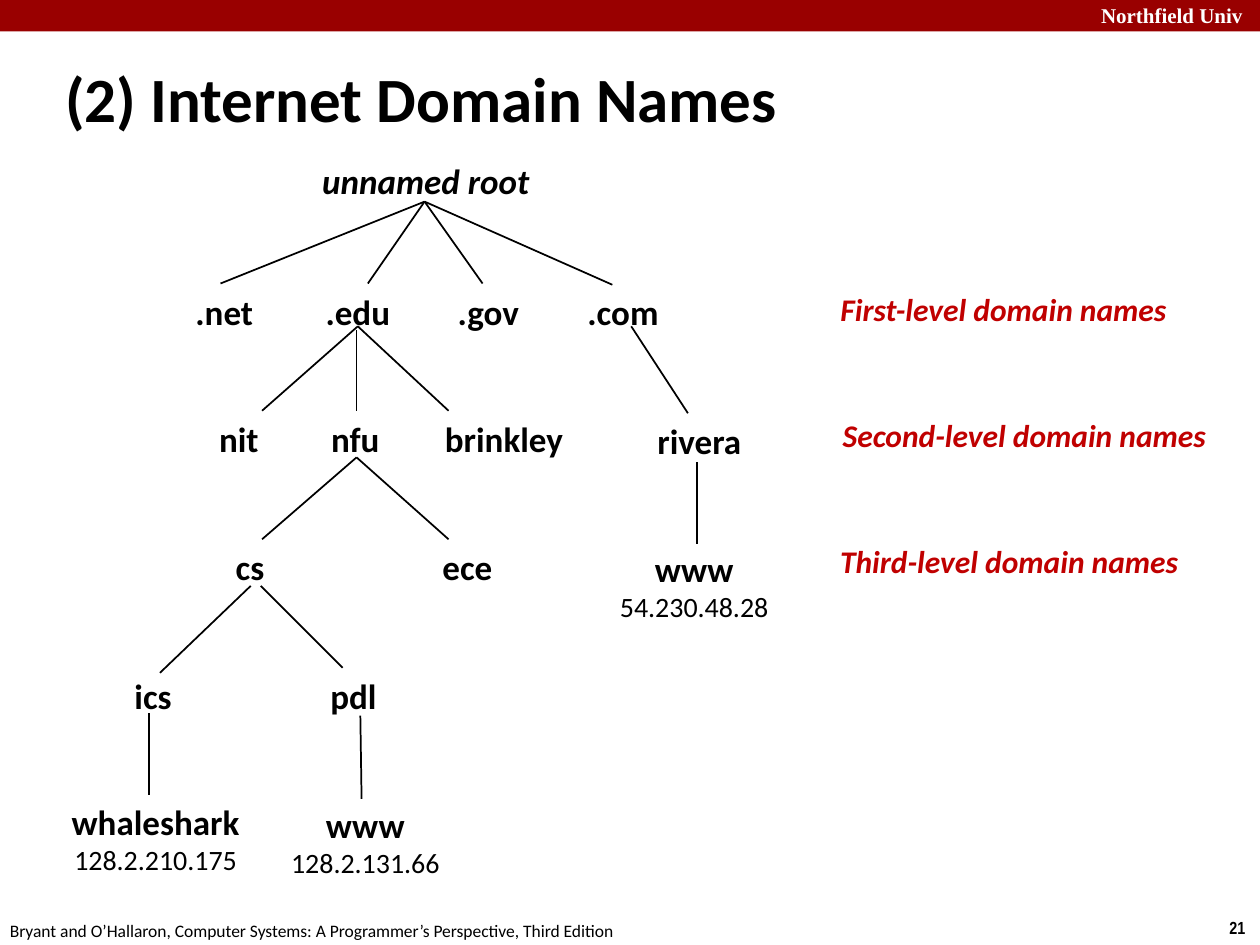
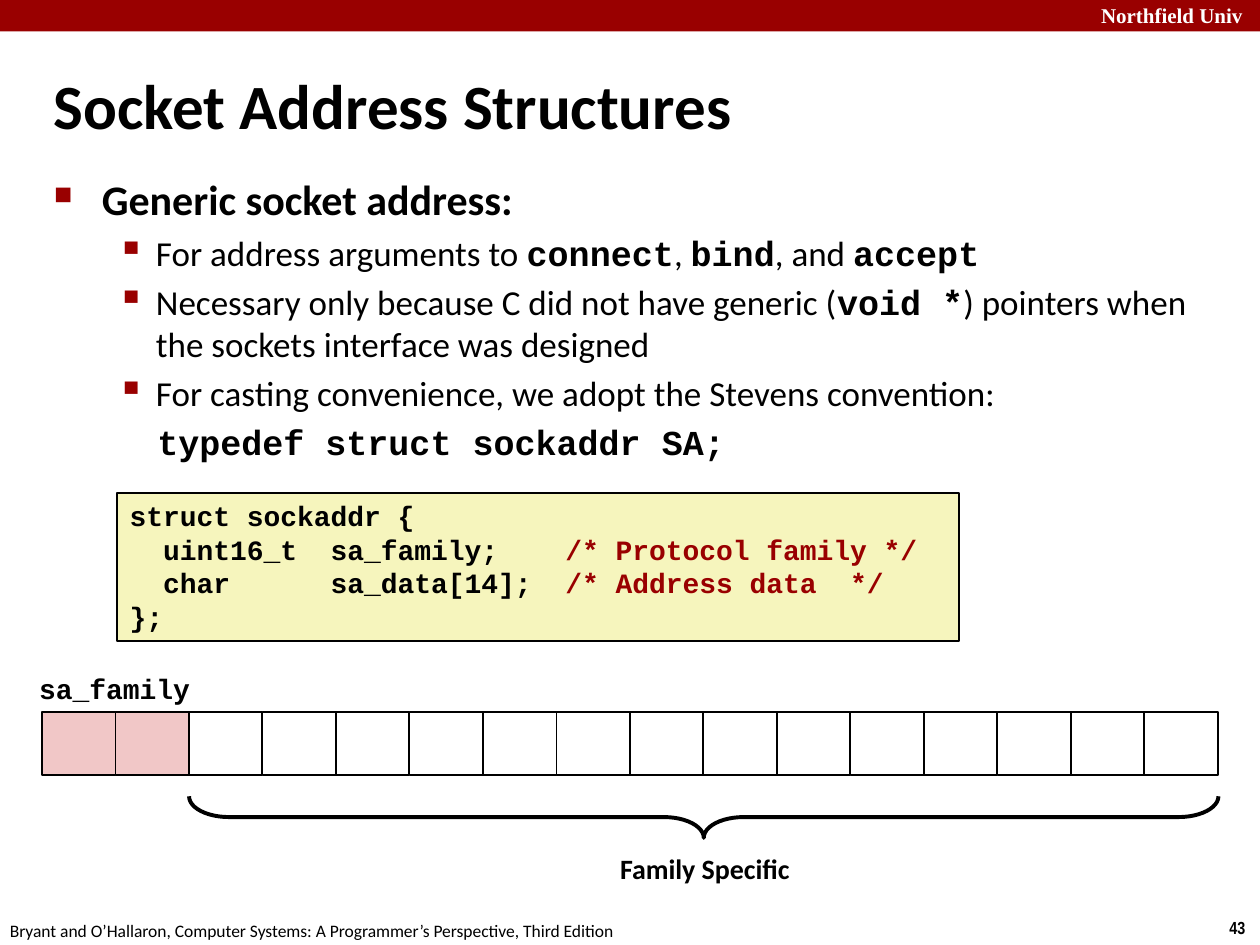
"""Build two lecture slides on domain names and socket addresses."""
from dataclasses import dataclass, replace
from typing import NamedTuple

from lxml import etree
from pptx import Presentation
from pptx import slide as sl
from pptx import util as u
from pptx.dml.color import RGBColor
from pptx.enum import shapes, text
from pptx.oxml import ns

BLACK = RGBColor(0x00, 0x00, 0x00)
WHITE = RGBColor(0xFF, 0xFF, 0xFF)
BAND_RED = RGBColor(0x99, 0x00, 0x00)
LABEL_RED = RGBColor(0xC0, 0x00, 0x00)
CODE_YELLOW = RGBColor(0xF6, 0xF5, 0xBD)
FAMILY_PINK = RGBColor(0xF1, 0xC7, 0xC7)

COLS, ROWS = 100, 75
UNIT = u.Inches(10) // COLS

LEFT, CENTER = text.PP_ALIGN.LEFT, text.PP_ALIGN.CENTER
TOP, MIDDLE = text.MSO_ANCHOR.TOP, text.MSO_ANCHOR.MIDDLE


@dataclass(frozen=True)
class Style:
    """Look of a run of text."""
    size: int
    font: str = "Calibri"
    color: RGBColor = BLACK
    bold: bool = True
    italic: bool = False


class Area(NamedTuple):
    """Place on the grid, in columns and rows."""
    col: float
    row: float
    width: float
    height: float


class Run(NamedTuple):
    """Words in one style."""
    words: str
    style: Style


class Node(NamedTuple):
    """Name in the domain tree, with an address if it is a host."""
    name: str
    col: float
    row: float
    width: float
    address: str = ""


class Fan(NamedTuple):
    """Lines from one point to several ends."""
    apex: tuple[float, float]
    ends: tuple[tuple[float, float], ...]


class Bullet(NamedTuple):
    """Paragraph of the body, with margin and hanging indent in columns."""
    char: str
    percent: int
    margin: float
    indent: float
    runs: tuple[Run, ...]


TITLE = Style(36)
NAME = Style(20)
ROOT = replace(NAME, italic=True)
ADDRESS = Style(16, bold=False)
LEVEL = Style(18, color=LABEL_RED, italic=True)
HEADING = Style(24)
BODY = Style(20, bold=False)
BODY_CODE = Style(20, "Courier New")
CODE = Style(16, "Courier New")
COMMENT = replace(CODE, color=BAND_RED)
CAPTION = Style(16)
BRAND = Style(12, "Times New Roman", WHITE)
NUMBER = Style(10, "Arial Narrow")
FOOTER = Style(10, bold=False)

NODES = (
    Node(".net", 14.5, 22.5, 6.6), Node(".edu", 24.8, 22.5, 7.2),
    Node(".gov", 35.3, 22.5, 6.9), Node(".com", 45.6, 22.5, 7.7),
    Node("nit", 16, 32.6, 5.9), Node("nfu", 24.7, 32.6, 7),
    Node("brinkley", 34, 32.6, 12), Node("rivera", 49.9, 32.8, 11.2),
    Node("cs", 17.7, 42.8, 4.3), Node("ece", 34.1, 42.8, 6),
    Node("www", 48.1, 42.9, 14, "54.230.48.28"),
    Node("ics", 8.4, 53, 7.5), Node("pdl", 25.2, 53, 5.7),
    Node("whaleshark", 4.6, 63, 15.5, "128.2.210.175"),
    Node("www", 22, 63.2, 14, "128.2.131.66"),
)
FANS = (
    Fan((33.7, 16), ((17.5, 22.5), (29.2, 22.5), (38.3, 22.5), (48.6, 22.6))),
    Fan((28.4, 25.9), ((20.8, 32.6), (35.6, 32.6))),
    Fan((28.3, 26.2), ((28.3, 32.6),)),
    Fan((50.1, 25.9), ((54.6, 32.8),)),
    Fan((28.3, 36.3), ((20.8, 42.8), (35.6, 42.8))),
    Fan((55.3, 36.7), ((55.3, 43.2),)),
    Fan((19.9, 46.5), ((12.7, 53.4),)),
    Fan((20.7, 46.5), ((27.2, 53),)),
    Fan((11.8, 56.6), ((11.8, 63.1),)),
    Fan((28.6, 56.8), ((28.7, 63.4),)),
)
LEVELS = (("First", 65.5, 28.3), ("Second", 65.7, 31.2), ("Third", 65.5, 29.2))

BULLETS = (
    Bullet("■", 60, 3.8, -3.8, (Run("Generic socket address:", HEADING),)),
    Bullet("▪", 110, 8.1, -3.1, (
        Run("For address arguments to ", BODY), Run("connect", BODY_CODE),
        Run(", ", BODY), Run("bind", BODY_CODE),
        Run(", and ", BODY), Run("accept", BODY_CODE))),
    Bullet("▪", 110, 8.1, -3.1, (
        Run("Necessary only because C did not have generic (", BODY),
        Run("void *", BODY_CODE),
        Run(") pointers when the sockets interface was designed", BODY))),
    Bullet("▪", 110, 8.1, -3.1, (
        Run("For casting convenience, we adopt the Stevens convention:", BODY),)),
    Bullet("", 0, 8.2, 0, (Run("typedef struct sockaddr SA;", BODY_CODE),)),
)
STRUCT = (
    (Run("struct sockaddr {", CODE),),
    (Run("  uint16_t  sa_family;    ", CODE), Run("/* Protocol family */", COMMENT)),
    (Run("  char      sa_data[14];  ", CODE), Run("/* Address data  */", COMMENT)),
    (Run("};", CODE),),
)
BYTES, FAMILY_BYTES = 16, 2
BYTE_ROW = Area(3.33, 56.5, 93.33, 5)


def grid(*lengths: float) -> list[int]:
    """Turn grid units into slide lengths."""
    return [round(n * UNIT) for n in lengths]


def fill_text(sp, paragraphs, align=LEFT, anchor=TOP, wrap=False) -> None:
    """Write paragraphs of runs into a shape."""
    tf = sp.text_frame
    tf.word_wrap = wrap
    tf.vertical_anchor = anchor
    for i, runs in enumerate(paragraphs):
        p = tf.paragraphs[0] if i == 0 else tf.add_paragraph()
        p.alignment = align
        for words, style in runs:
            r = p.add_run()
            r.text = words
            r.font.size = u.Pt(style.size)
            r.font.name = style.font
            r.font.color.rgb = style.color
            r.font.bold = style.bold
            r.font.italic = style.italic


def add_text(s: sl.Slide, area: Area, *paragraphs, **layout):
    """Add a text box on the grid."""
    sp = s.shapes.add_textbox(*grid(*area))
    fill_text(sp, paragraphs, **layout)
    return sp


def add_box(parent, area: Area, fill: RGBColor | None = None, line: float = 0,
            kind=shapes.MSO_SHAPE.RECTANGLE):
    """Add a preset shape with an optional fill and outline."""
    sp = parent.shapes.add_shape(kind, *grid(*area))
    sp.shadow.inherit = False
    if fill is None:
        sp.fill.background()
    else:
        sp.fill.solid()
        sp.fill.fore_color.rgb = fill
    if line:
        sp.line.color.rgb = BLACK
        sp.line.width = u.Pt(line)
    else:
        sp.line.fill.background()
    return sp


def add_fan(s: sl.Slide, fan: Fan) -> None:
    """Draw the lines of a fan."""
    for end in fan.ends:
        line = s.shapes.add_connector(
            shapes.MSO_CONNECTOR.STRAIGHT, *grid(*fan.apex, *end))
        line.line.color.rgb = BLACK
        line.line.width = u.Pt(1)
        etree.SubElement(line._element.spPr, ns.qn("a:effectLst"))


def set_indent(p, margin: float, indent: float):
    """Set margin and first-line indent of a paragraph."""
    pPr = p._p.get_or_add_pPr()
    for key, length in zip(("marL", "indent"), grid(margin, indent)):
        pPr.set(key, str(length))
    return pPr


def format_bullet(p, bullet: Bullet) -> None:
    """Indent a body paragraph and give it its bullet."""
    p.space_before = u.Pt(0.2 * bullet.runs[0].style.size)
    pPr = set_indent(p, bullet.margin, bullet.indent)
    if bullet.char:
        color = etree.SubElement(pPr, ns.qn("a:buClr"))
        etree.SubElement(color, ns.qn("a:srgbClr"), val=str(BAND_RED))
        etree.SubElement(pPr, ns.qn("a:buSzPct"), val=str(bullet.percent * 1000))
        etree.SubElement(pPr, ns.qn("a:buChar"), char=bullet.char)


def add_slide(prs, title: str, title_area: Area, number: int) -> sl.Slide:
    """Add a slide with band, title and footers."""
    s = prs.slides.add_slide(prs.slide_layouts[6])
    add_box(s, Area(0, 0, COLS, 2.5), BAND_RED)
    add_text(s, Area(86.4, -0.3, 14.3, 3), [Run("Northfield Univ", BRAND)], wrap=True)
    add_text(s, Area(96.6, 72.3, 3.4, 2.7), [Run(str(number), NUMBER)])
    add_text(s, Area(-0.2, 72.5, 50.8, 2.7), [Run(
        "Bryant and O’Hallaron, Computer Systems: "
        "A Programmer’s Perspective, Third Edition", FOOTER)])
    add_text(s, title_area, [Run(title, TITLE)], anchor=MIDDLE, wrap=True)
    return s


def build_domain_names(prs) -> None:
    """Build the slide with the domain tree."""
    s = add_slide(prs, "(2) Internet Domain Names", Area(4.2, 4.6, 77.4, 6.3), 21)
    for fan in FANS:
        add_fan(s, fan)
    add_text(s, Area(24.5, 12.1, 18.6, 4.4), [Run("unnamed root", ROOT)],
             align=CENTER, anchor=MIDDLE)
    for node in NODES:
        lines = [[Run(node.name, NAME)]]
        if node.address:
            lines.append([Run(node.address, ADDRESS)])
        height = 7.1 if node.address else 4.4
        add_text(s, Area(node.col, node.row, node.width, height), *lines,
                 align=CENTER, anchor=MIDDLE)
    for i, (rank, col, width) in enumerate(LEVELS):
        add_text(s, Area(col, 22.5 + 10 * i, width, 4),
                 [Run(f"{rank}-level domain names", LEVEL)],
                 align=CENTER, anchor=MIDDLE)


def build_socket_address(prs) -> None:
    """Build the slide with the socket address layout."""
    s = add_slide(prs, "Socket Address Structures", Area(3.3, 4, 95.3, 8.5), 43)
    body = add_text(s, Area(3.3, 13.3, 95.3, 25), *(b.runs for b in BULLETS), wrap=True)
    for p, bullet in zip(body.text_frame.paragraphs, BULLETS):
        format_bullet(p, bullet)
    fill_text(add_box(s, Area(9.3, 39.1, 66.8, 11.8), CODE_YELLOW, 1), STRUCT)

    cells = s.shapes.add_group_shape()
    width = BYTE_ROW.width / BYTES
    for i in range(BYTES):
        add_box(cells, BYTE_ROW._replace(col=BYTE_ROW.col + i * width, width=width),
                FAMILY_PINK if i < FAMILY_BYTES else None, 1)
    add_text(s, Area(2.1, 52.8, 14, 3.7), [Run("sa_family", CODE)], align=CENTER)
    add_text(s, Area(48.1, 67.1, 15.7, 3.7), [Run("Family Specific", CAPTION)],
             align=CENTER)

    brace = add_box(s, Area(54.2, 24, 3.3, 81.7), line=2.25,
                    kind=shapes.MSO_SHAPE.RIGHT_BRACE)
    brace.rotation = 90
    brace.adjustments[0] = 0.96


def main() -> None:
    """Build and save the slides."""
    prs = Presentation()
    prs.slide_width, prs.slide_height = grid(COLS, ROWS)
    build_domain_names(prs)
    build_socket_address(prs)
    prs.save("out.pptx")


if __name__ == "__main__":
    main()
